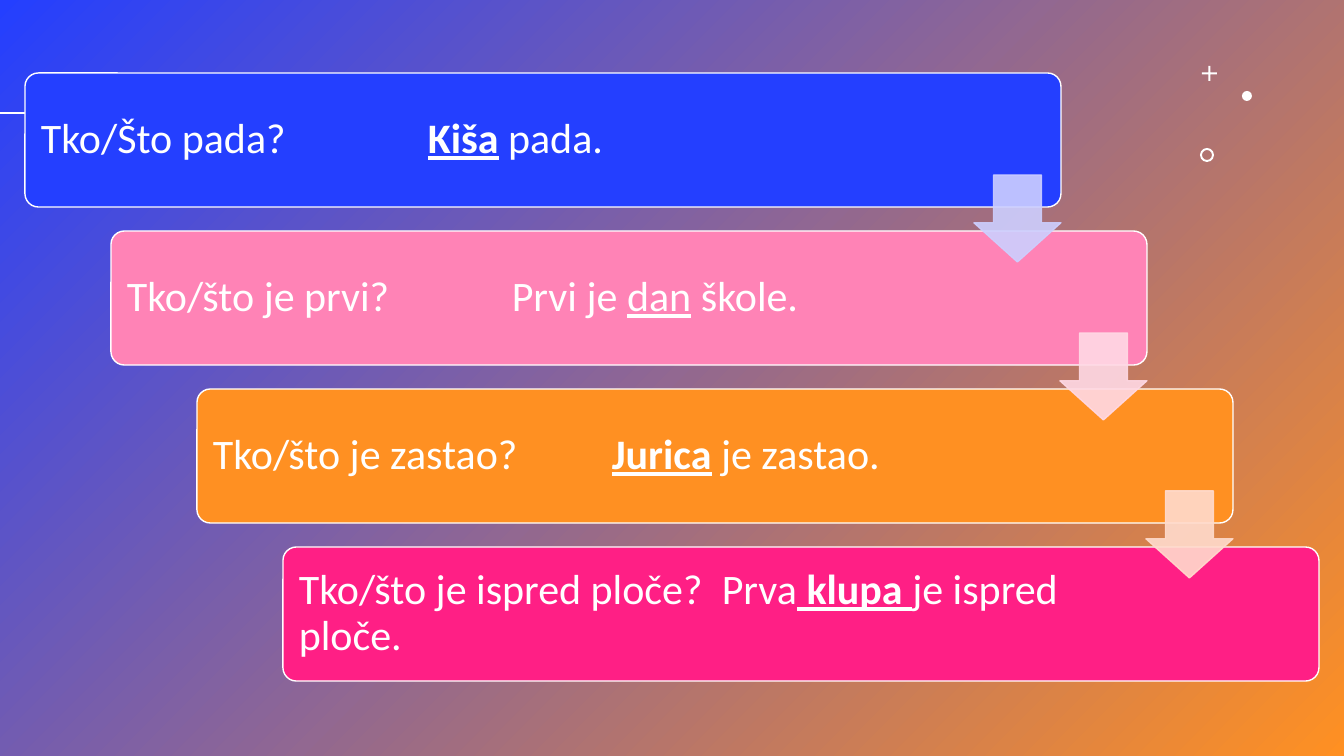
import pptx
import pptx.dml.color
import pptx.enum.shapes
import pptx.enum.text
import pptx.oxml.ns
import pptx.oxml.xmlchemy
import pptx.util

RGB = pptx.dml.color.RGBColor
SHAPE = pptx.enum.shapes.MSO_SHAPE
qn = pptx.oxml.ns.qn
new_element = pptx.oxml.xmlchemy.OxmlElement

WHITE = RGB(0xFF, 0xFF, 0xFF)
BLUE = RGB(0x24, 0x3F, 0xFF)
PINK = RGB(0xFF, 0x83, 0xB6)
ORANGE = RGB(0xFF, 0x90, 0x22)
MAGENTA = RGB(0xFF, 0x1F, 0x85)
PALE_BLUE = RGB(0xCD, 0xCF, 0xFF)
PALE_PINK = RGB(0xFF, 0xD9, 0xE5)
PALE_ORANGE = RGB(0xFF, 0xDB, 0xCD)

SLIDE_W, SLIDE_H = 1344, 756
CARD_W, CARD_H = 1036, 134
STEP_X, STEP_Y = 86, 158
ARROW_SIZE, ARROW_DROP = 87, 102

# Each card: fill, tab stops in px, runs of (text, bold, underlined)
CARDS = [
    (BLUE, [387], [("Tko/Što pada?\t", False, False), ("Kiša", True, True),
                   (" pada.", False, False)]),
    (PINK, [385], [("Tko/što je prvi?\tPrvi je ", False, False),
                   ("dan", False, True), (" škole.", False, False)]),
    (ORANGE, [371, 399], [("Tko/što je zastao?\t", False, False),
                          ("\tJurica", True, True),
                          (" je zastao.", False, False)]),
    (MAGENTA, [423], [("Tko/što je ispred ploče?", False, False),
                      ("\t", True, True), ("Prva", False, False),
                      (" klupa ", True, True),
                      ("je ispred ploče.", False, False)]),
]
ARROW_COLOURS = [PALE_BLUE, PALE_PINK, PALE_ORANGE]


def px(length):
    return pptx.util.Emu(round(length * 914400 / 100.8))


def add_plain(slide, kind, x, y, w, h, fill=None, line=None):
    """Add a preset shape without shadow; fill and line are optional colours."""
    shape = slide.shapes.add_shape(kind, px(x), px(y), px(w), px(h))
    shape.shadow.inherit = False
    if fill is not None:
        shape.fill.solid()
        shape.fill.fore_color.rgb = fill
    if line is None:
        shape.line.fill.background()
    else:
        shape.line.color.rgb = line
        shape.line.width = pptx.util.Pt(1)
    return shape


def add_backdrop(slide):
    backdrop = add_plain(slide, SHAPE.RECTANGLE, 0, 0, SLIDE_W, SLIDE_H)
    backdrop.fill.gradient()
    backdrop.fill.gradient_angle = 315
    for stop, colour in zip(backdrop.fill.gradient_stops, (BLUE, ORANGE)):
        stop.color.rgb = colour


def add_ornaments(slide, x, y):
    """Add the plus, dot and ring in the corner that starts at x, y."""
    plus = add_plain(slide, SHAPE.CROSS, x + 2, y, 15, 15, WHITE)
    plus.adjustments[0] = 0.43
    add_plain(slide, SHAPE.OVAL, x + 42, y + 25, 10, 10, WHITE)
    ring = add_plain(slide, SHAPE.DONUT, x, y + 82, 14, 14, WHITE)
    ring.adjustments[0] = 0.14


def add_side_rule(slide, y, length):
    rule = slide.shapes.add_connector(
        pptx.enum.shapes.MSO_CONNECTOR.STRAIGHT, 0, px(y), px(length), px(y))
    rule.line.color.rgb = WHITE
    rule.line.width = pptx.util.Pt(2)
    rule._element.spPr.append(new_element("a:effectLst"))


def add_card(slide, x, y, fill, tab_stops, runs):
    card = add_plain(slide, SHAPE.ROUNDED_RECTANGLE, x, y, CARD_W, CARD_H,
                     fill, WHITE)
    card.adjustments[0] = 0.1
    frame = card.text_frame
    frame.word_wrap = True
    frame.vertical_anchor = pptx.enum.text.MSO_ANCHOR.MIDDLE
    frame.margin_left = frame.margin_top = frame.margin_bottom = px(12)
    frame.margin_right = px(185)
    sentence = frame.paragraphs[0]
    sentence.alignment = pptx.enum.text.PP_ALIGN.LEFT
    sentence.line_spacing = 0.9
    tab_list = new_element("a:tabLst")
    for stop in tab_stops:
        tab = new_element("a:tab")
        tab.set("pos", str(px(stop)))
        tab.set("algn", "l")
        tab_list.append(tab)
    sentence._p.get_or_add_pPr().append(tab_list)
    for text, bold, underlined in runs:
        run = sentence.add_run()
        run.text = text
        run.font.name = "Calibri"
        run.font.size = pptx.util.Pt(30)
        run.font.color.rgb = WHITE
        run.font.bold = bold
        run.font.underline = underlined


def add_arrow(slide, x, y, colour):
    arrow = add_plain(slide, SHAPE.DOWN_ARROW, x, y, ARROW_SIZE, ARROW_SIZE,
                      colour, colour)
    arrow.adjustments[0] = 0.55
    arrow.adjustments[1] = 0.45
    for tint in list(arrow._element.spPr.iter(qn("a:srgbClr"))):
        alpha = new_element("a:alpha")
        alpha.set("val", "90000")
        tint.append(alpha)


def add_staircase(slide, x, y):
    """Add the stepped cards from x, y and the arrows leading between them."""
    for i, card in enumerate(CARDS):
        add_card(slide, x + i * STEP_X, y + i * STEP_Y, *card)
    for i, colour in enumerate(ARROW_COLOURS):
        add_arrow(slide, x + i * STEP_X + CARD_W - ARROW_SIZE,
                  y + i * STEP_Y + ARROW_DROP, colour)


def main():
    deck = pptx.Presentation()
    deck.slide_width, deck.slide_height = px(SLIDE_W), px(SLIDE_H)
    slide = deck.slides.add_slide(deck.slide_layouts[6])
    add_backdrop(slide)
    add_ornaments(slide, 1200, 66)
    add_side_rule(slide, 113, 376)
    add_staircase(slide, 25, 73)
    deck.save("out.pptx")


if __name__ == "__main__":
    main()
